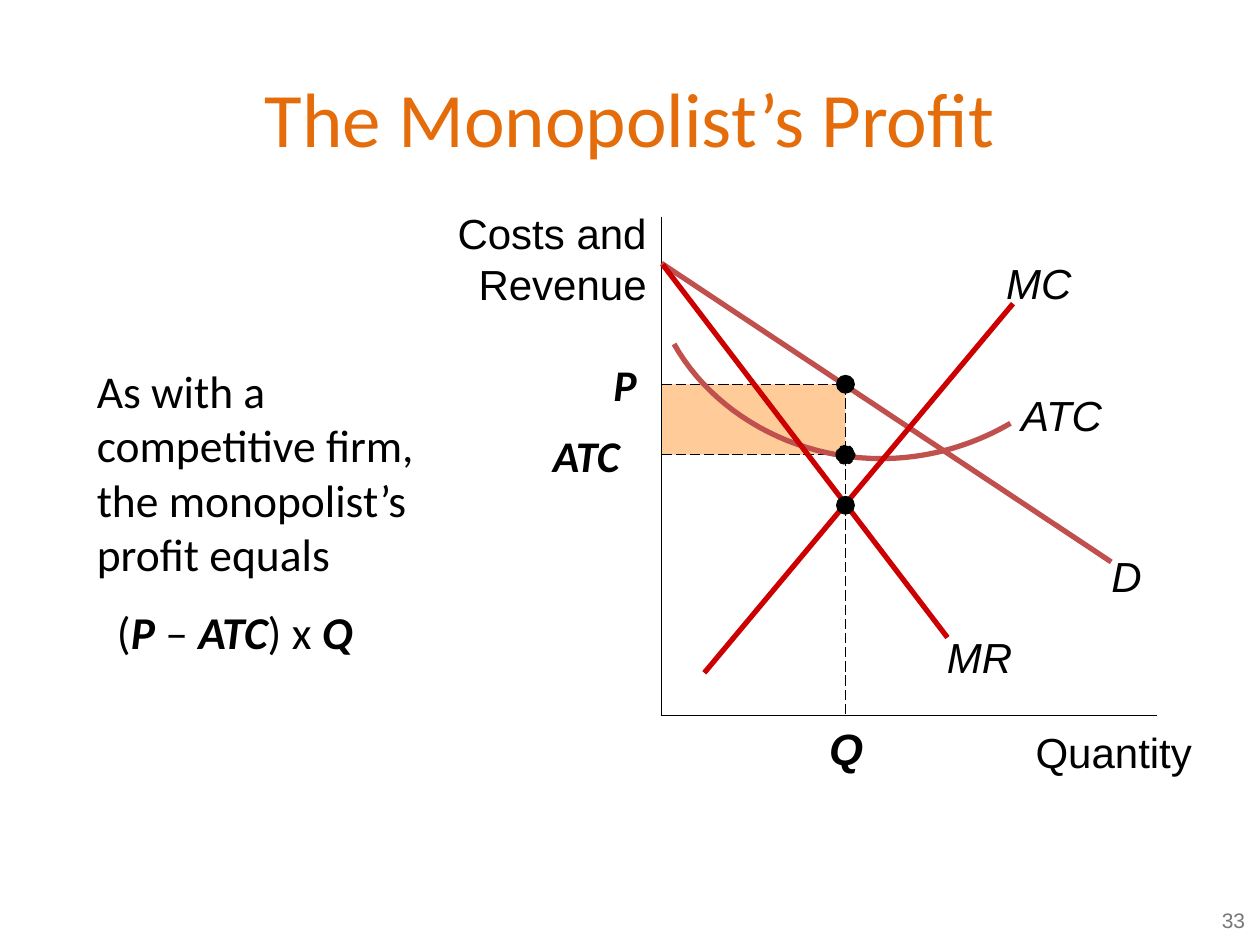
from dataclasses import dataclass

import pptx
import pptx.dml.color
import pptx.enum.dml
import pptx.enum.shapes
import pptx.enum.text
import pptx.oxml.ns
import pptx.util
from lxml import etree

Inches, Pt = pptx.util.Inches, pptx.util.Pt
SHAPE = pptx.enum.shapes.MSO_SHAPE
ALIGN = pptx.enum.text.PP_ALIGN
ANCHOR = pptx.enum.text.MSO_ANCHOR
DASH = pptx.enum.dml.MSO_LINE


@dataclass(frozen=True)
class Theme:
    title: str = "E46C0A"
    ink: str = "000000"
    muted: str = "777777"
    profit: str = "FFCC99"
    average: str = "C0504D"
    marginal: str = "CC0000"
    paper: str = "FFFFFF"
    sans: str = "Calibri"
    label: str = "Arial"
    title_size: float = 44
    body_size: float = 26
    value_size: float = 25
    label_size: float = 24
    number_size: float = 12
    thin: float = 0.75
    thick: float = 3


THEME = Theme()

# Diagram positions in inches
AXIS_X, AXIS_TOP, AXIS_Y, AXIS_RIGHT = 5.25, 1.72, 5.68, 9.18
QUANTITY_X = 6.71
PRICE_Y, COST_Y, MARGINAL_Y = 3.05, 3.61, 4.01
DOT = 0.15


def rgb(value):
    return pptx.dml.color.RGBColor.from_string(value)


def style_font(font, size, color=THEME.ink, name=THEME.label, bold=None, italic=None):
    font.name, font.size, font.color.rgb = name, Pt(size), rgb(color)
    font.bold, font.italic = bold, italic


def style_line(line, color, width, dash=None):
    line.color.rgb, line.width = rgb(color), Pt(width)
    if dash:
        line.dash_style = dash


def add_text(slide, box, text, size=THEME.label_size, align=ALIGN.CENTER,
             inset=True, wrap=True, anchor=ANCHOR.TOP, **font):
    text_box = slide.shapes.add_textbox(*map(Inches, box))
    frame = text_box.text_frame
    frame.word_wrap, frame.vertical_anchor = wrap, anchor
    if not inset:
        frame.margin_left = frame.margin_right = 0
        frame.margin_top = frame.margin_bottom = 0
    paragraph = frame.paragraphs[0]
    paragraph.text, paragraph.alignment = text, align
    style_font(paragraph.font, size, **font)
    return text_box


def add_line(slide, start, end, color=THEME.ink, width=THEME.thin, dash=None):
    line = slide.shapes.add_connector(
        pptx.enum.shapes.MSO_CONNECTOR.STRAIGHT, *map(Inches, (*start, *end)))
    style_line(line.line, color, width, dash)
    etree.SubElement(line._element.spPr, pptx.oxml.ns.qn("a:effectLst"))


def add_filled(slide, preset, box, color):
    shape = slide.shapes.add_shape(preset, *map(Inches, box))
    shape.shadow.inherit = False
    shape.fill.solid()
    shape.fill.fore_color.rgb = rgb(color)
    shape.line.fill.background()
    return shape


def add_dot(slide, y):
    corner = (QUANTITY_X - DOT / 2, y - DOT / 2)
    return add_filled(slide, SHAPE.OVAL, (*corner, DOT, DOT), THEME.ink)


def bezier(controls, steps=24):
    """Points along a cubic curve, ends included."""
    weights = (1, 3, 3, 1)
    for step in range(steps + 1):
        t = step / steps
        yield tuple(
            Inches(sum(w * (1 - t) ** (3 - i) * t ** i * point[axis]
                       for i, (w, point) in enumerate(zip(weights, controls))))
            for axis in (0, 1))


def add_curve(slide, segments, color):
    points = [point for controls in segments for point in bezier(controls)]
    builder = slide.shapes.build_freeform(*points[0])
    builder.add_line_segments(points[1:], close=False)
    curve = builder.convert_to_shape()
    curve.shadow.inherit = False
    curve.fill.background()
    style_line(curve.line, color, THEME.thick)


def add_title(slide):
    title = slide.shapes.title
    title.left, title.top, title.width, title.height = map(Inches, (0.5, 0.3, 9, 1.25))
    title.text_frame.vertical_anchor = ANCHOR.MIDDLE
    paragraph = title.text_frame.paragraphs[0]
    paragraph.text, paragraph.alignment = "The Monopolist’s Profit", ALIGN.CENTER
    style_font(paragraph.font, THEME.title_size, THEME.title, THEME.sans)


def add_explanation(slide):
    explanation = add_text(
        slide, (0.67, 2.83, 3.16, 2.76),
        "As with a competitive firm, \vthe monopolist’s \vprofit equals",
        THEME.body_size, ALIGN.LEFT, name=THEME.sans)
    formula = explanation.text_frame.add_paragraph()
    formula.space_before = Pt(THEME.body_size / 2)
    indent = formula._p.get_or_add_pPr()
    indent.set("marL", str(Inches(0.16)))
    indent.set("indent", "0")
    style_font(formula.font, THEME.body_size, name=THEME.sans)
    for text, is_variable in (("(", False), ("P", True), (" – ", False),
                              ("ATC", True), (") x ", False), ("Q", True)):
        run = formula.add_run()
        run.text = text
        run.font.bold = run.font.italic = is_variable


def add_axes(slide):
    origin = (AXIS_X, AXIS_Y)
    add_line(slide, (AXIS_X, AXIS_TOP), origin)
    add_line(slide, origin, (AXIS_RIGHT, AXIS_Y))
    add_text(slide, (8.1, 5.77, 1.36, 0.4), "Quantity", align=ALIGN.RIGHT, inset=False)
    add_text(slide, (3.49, 1.6, 1.74, 0.9), "Costs and Revenue", align=ALIGN.RIGHT)


def add_curves(slide):
    # Average total cost, right end to left end
    add_curve(slide, (
        ((8.02, 3.36), (7.71, 3.54), (7.36, 3.64), (6.99, 3.64)),
        ((6.99, 3.64), (6.3, 3.64), (5.66, 3.28), (5.35, 2.73)),
    ), THEME.average)
    # Demand, marginal revenue and marginal cost
    for start, end, color in (
            ((5.25, 2.09), (8.82, 4.46), THEME.average),
            ((5.26, 2.1), (7.52, 5.06), THEME.marginal),
            ((5.59, 5.34), (8.04, 2.41), THEME.marginal)):
        add_line(slide, start, end, color, THEME.thick)
    for name, left, top, width in (("ATC", 8.02, 3.09, 0.81), ("D", 8.7, 4.37, 0.48),
                                   ("MR", 7.45, 5.01, 0.65), ("MC", 7.92, 2.04, 0.65)):
        add_text(slide, (left, top, width, 0.4), name, inset=False, italic=True)


def add_guides(slide):
    for start, end in (((AXIS_X, PRICE_Y), (QUANTITY_X, PRICE_Y)),
                       ((QUANTITY_X, PRICE_Y), (QUANTITY_X, MARGINAL_Y)),
                       ((QUANTITY_X, MARGINAL_Y), (QUANTITY_X, AXIS_Y)),
                       ((AXIS_X, COST_Y), (QUANTITY_X, COST_Y))):
        add_line(slide, start, end, dash=DASH.LONG_DASH)


def add_values(slide):
    add_dot(slide, MARGINAL_Y)
    add_dot(slide, PRICE_Y)
    style_line(add_dot(slide, COST_Y).line, THEME.ink, THEME.thin, DASH.DASH)
    emphasis = dict(size=THEME.value_size, bold=True, italic=True)
    add_text(slide, (6.43, 5.68, 0.57, 0.52), "Q", **emphasis)
    add_text(slide, (4.77, 2.79, 0.43, 0.52), "P", align=ALIGN.LEFT, wrap=False,
             name=THEME.sans, **emphasis)
    cost = add_text(slide, (4.29, 3.35, 0.93, 0.52), "ATC", align=ALIGN.LEFT,
                    name=THEME.sans, **emphasis)
    style_line(cost.line, THEME.paper, THEME.thin)


def main():
    deck = pptx.Presentation()
    deck.slide_width, deck.slide_height = Inches(10), Inches(7.5)
    slide = deck.slides.add_slide(deck.slide_layouts[5])

    # Slide number, title and explanation
    add_text(slide, (6.06, 7.1, 3.92, 0.4), "33", THEME.number_size, ALIGN.RIGHT,
             anchor=ANCHOR.MIDDLE, color=THEME.muted)
    add_title(slide)
    add_explanation(slide)

    # Diagram, from the profit area up to the marked values
    add_filled(slide, SHAPE.RECTANGLE,
               (AXIS_X, PRICE_Y, QUANTITY_X - AXIS_X, COST_Y - PRICE_Y), THEME.profit)
    add_axes(slide)
    add_guides(slide)
    add_curves(slide)
    add_values(slide)

    deck.save("out.pptx")


if __name__ == "__main__":
    main()
